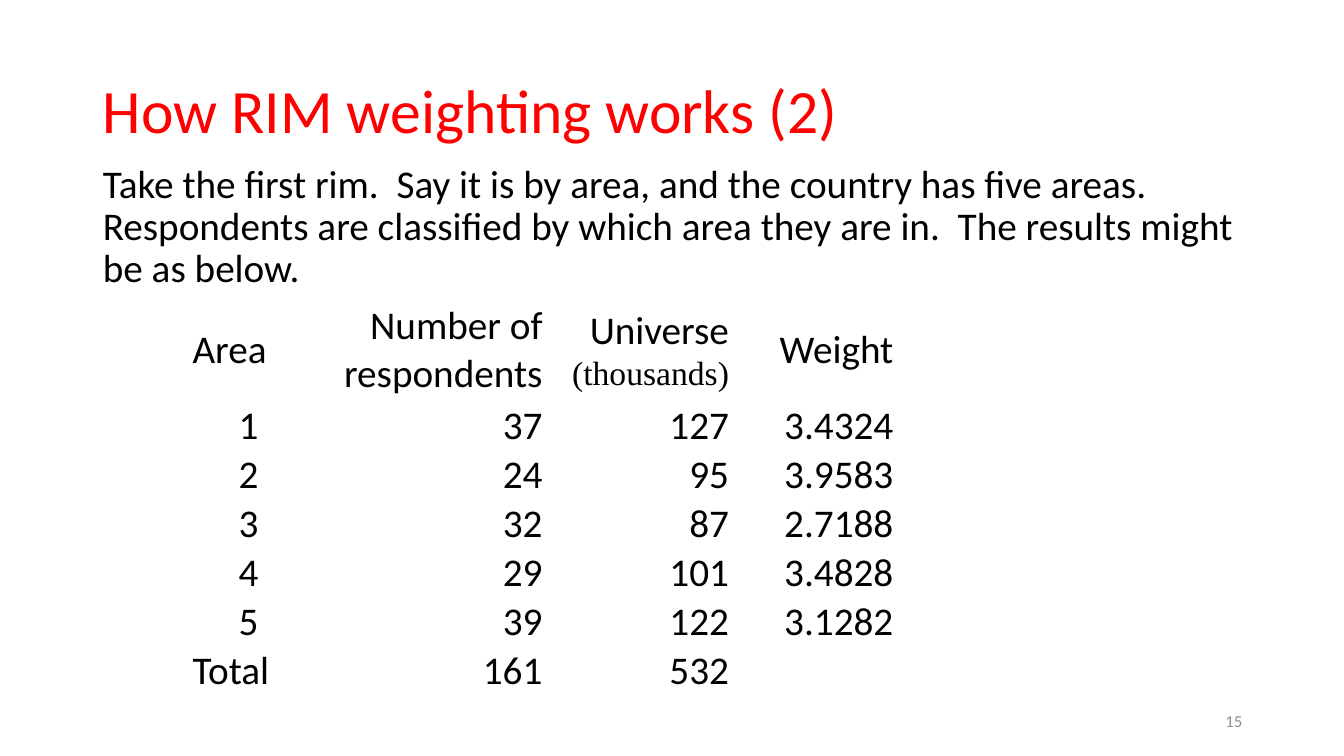
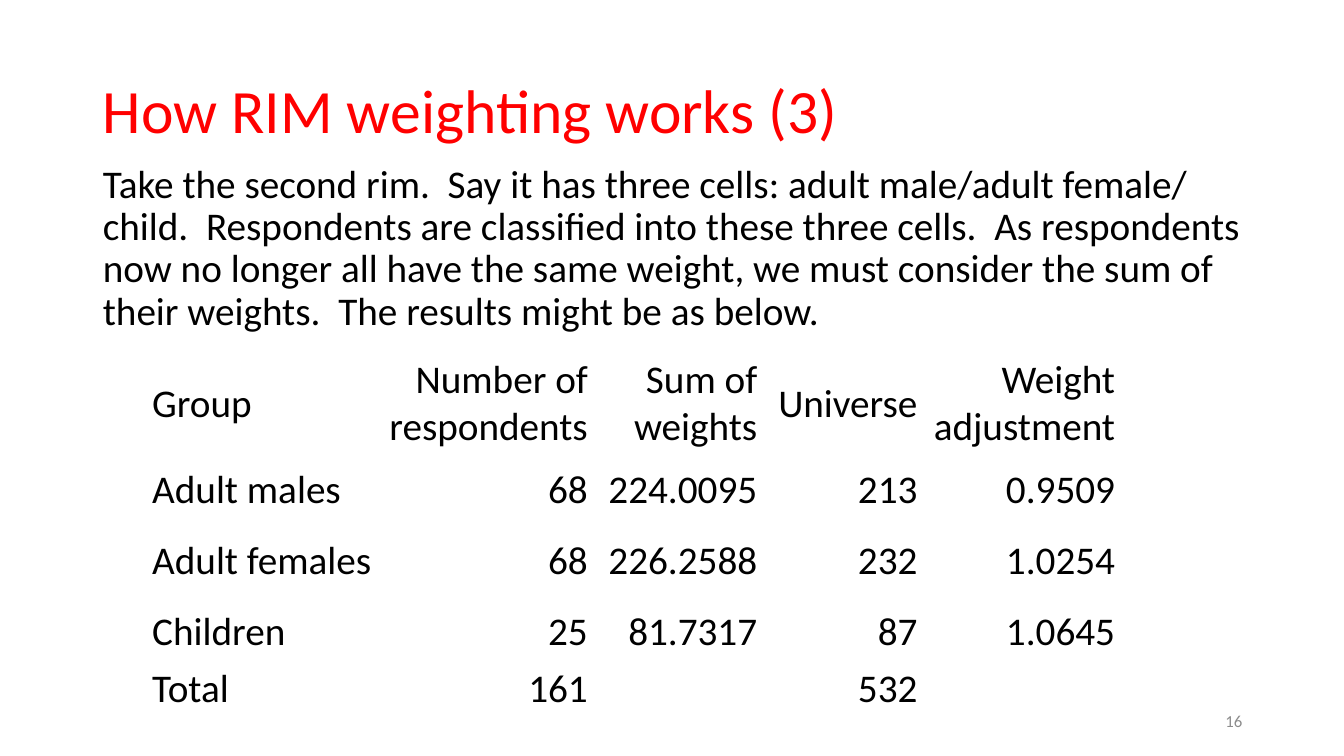
import pptx
import pptx.util
import pptx.dml.color
import pptx.enum.text
import pptx.oxml.ns
from pptx.util import Inches

ALIGN = pptx.enum.text.PP_ALIGN
MIDDLE = pptx.enum.text.MSO_ANCHOR.MIDDLE
COLORS = {"title": "FF0000", "text": "000000", "number": "8C8C8C"}

PAGES = [
    {
        "number": 15,
        "title": "How RIM weighting works (2)",
        "body": "Take the first rim.  Say it is by area, and the country has five areas.  "
                "Respondents are classified by which area they are in.  "
                "The results might be as below.",
        "at": (1.9, 2.95),
        "columns": [1.13, 2.36, 1.85, 1.63],
        "heights": [1.03] + [0.45] * 6,
        "rows": [
            ["Area", "Number of respondents", "Universe\n(thousands)", "Weight"],
            ["1", "37", "127", "3.4324"],
            ["2", "24", "95", "3.9583"],
            ["3", "32", "87", "2.7188"],
            ["4", "29", "101", "3.4828"],
            ["5", "39", "122", "3.1282"],
            ["Total", "161", "532", ""],
        ],
    },
    {
        "number": 16,
        "title": "How RIM weighting works (3)",
        "body": "Take the second rim.  Say it has three cells: adult male/adult female/ child.  "
                "Respondents are classified into these three cells.  "
                "As respondents now no longer all have the same weight, "
                "we must consider the sum of their weights.  "
                "The results might be as below.",
        "at": (1.5, 3.43),
        "columns": [2.26, 2.08, 1.68, 1.59, 1.96],
        "heights": [1.14, 0.57, 0.84, 0.57, 0.57],
        "rows": [
            ["Group", "Number of respondents", "Sum of weights", "Universe", "Weight adjustment"],
            ["Adult males", "68", "224.0095", "213", "0.9509"],
            ["Adult females", "68", "226.2588", "232", "1.0254"],
            ["Children", "25", "81.7317", "87", "1.0645"],
            ["Total", "161", "", "532", ""],
        ],
    },
]


def style(para, size, color, align=ALIGN.LEFT, name="Calibri"):
    para.alignment = align
    para.font.size = pptx.util.Pt(size)
    para.font.name = name
    para.font.color.rgb = pptx.dml.color.RGBColor.from_string(COLORS[color])


def place(box, left, top, width, height, text, anchor):
    """Position a text shape, fill in its text and return its paragraph."""
    box.left, box.top = Inches(left), Inches(top)
    box.width, box.height = Inches(width), Inches(height)
    frame = box.text_frame
    frame.text = text
    frame.word_wrap = True
    frame.auto_size = pptx.enum.text.MSO_AUTO_SIZE.NONE
    frame.vertical_anchor = anchor
    return frame.paragraphs[0]


deck = pptx.Presentation()
deck.slide_width, deck.slide_height = Inches(13.33), Inches(7.5)

for content in PAGES:
    page = deck.slides.add_slide(deck.slide_layouts[1])

    para = place(page.shapes.title, 0.92, 0.4, 11.5, 1.45, content["title"], MIDDLE)
    style(para, 44, "title")
    para.line_spacing = 0.9

    para = place(page.placeholders[1], 0.92, 1.58, 11.5, 5.17, content["body"],
                 pptx.enum.text.MSO_ANCHOR.TOP)
    style(para, 28, "text")
    para.line_spacing = 0.9
    para.space_before = pptx.util.Pt(10)
    properties = para._p.get_or_add_pPr()
    properties.set("marL", "0")
    properties.set("indent", "0")
    bullet = pptx.oxml.xmlchemy.OxmlElement("a:buNone")
    properties.append(bullet)

    rows, columns, heights = content["rows"], content["columns"], content["heights"]
    left, top = content["at"]
    table = page.shapes.add_table(len(rows), len(columns), Inches(left), Inches(top),
                                  Inches(sum(columns)), Inches(sum(heights))).table
    table.first_row = table.horz_banding = False
    for column, width in zip(table.columns, columns):
        column.width = Inches(width)
    for row, height, texts in zip(table.rows, heights, rows):
        row.height = Inches(height)
        for index, (cell, text) in enumerate(zip(row.cells, texts)):
            cell.fill.background()
            cell.vertical_anchor = MIDDLE
            cell.margin_left = cell.margin_right = cell.margin_top = Inches(0.01)
            cell.margin_bottom = 0
            cell.text = text
            if index:
                align = ALIGN.RIGHT
            else:
                align = ALIGN.CENTER if text.isdigit() else ALIGN.LEFT
            heading, *units = cell.text_frame.paragraphs
            style(heading, 28, "text", align)
            for unit in units:
                style(unit, 24, "text", align, "Times New Roman")

    number = page.shapes.add_textbox(0, 0, 0, 0)
    para = place(number, 9.42, 6.95, 3, 0.4, str(content["number"]), MIDDLE)
    style(para, 12, "number", ALIGN.RIGHT)

deck.save("out.pptx")
